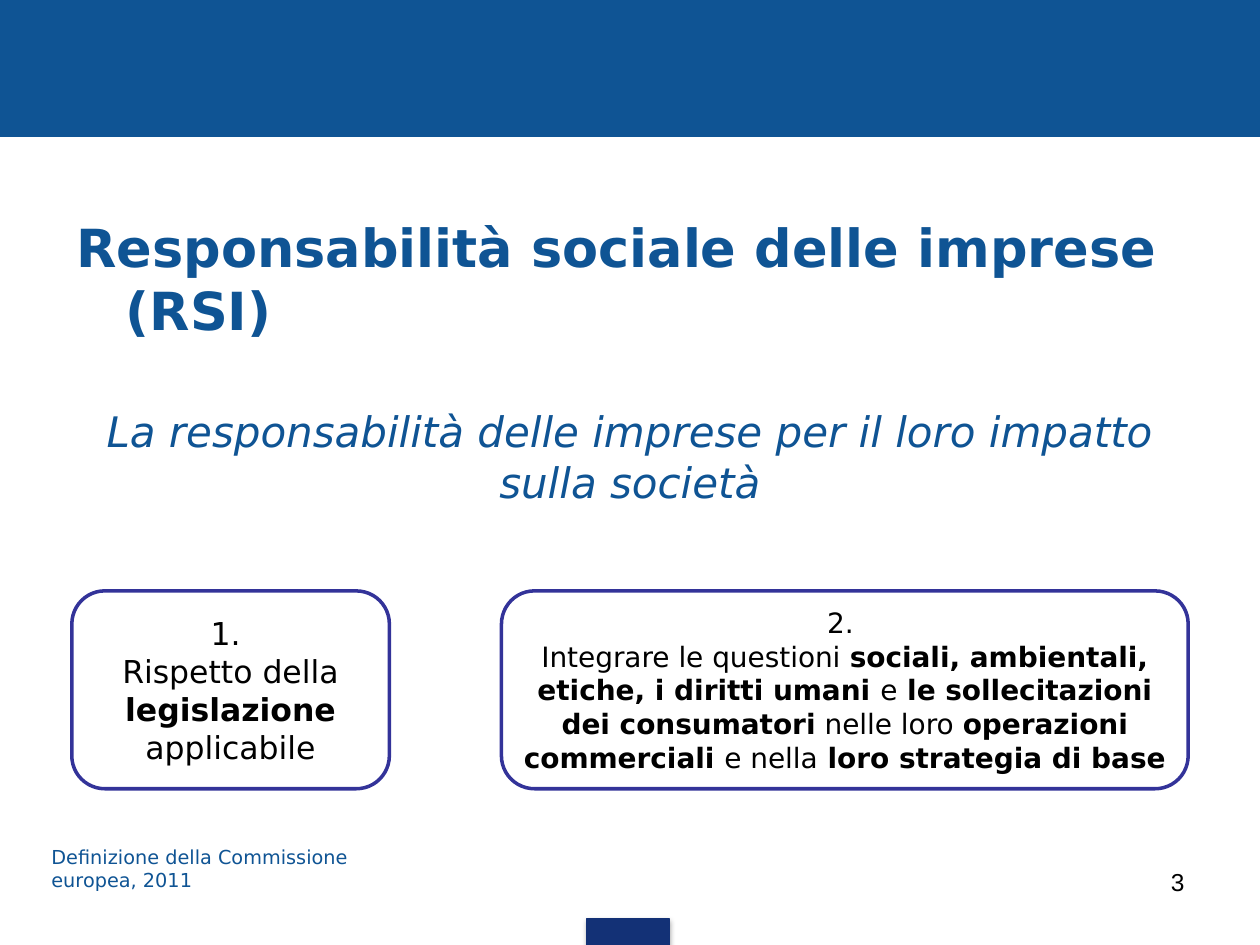
from dataclasses import dataclass

from lxml.etree import SubElement
from pptx import Presentation
from pptx.dml.color import RGBColor
from pptx.enum.shapes import MSO_SHAPE
from pptx.enum.text import MSO_ANCHOR, PP_ALIGN
from pptx.oxml.ns import qn
from pptx.shapes.autoshape import Shape
from pptx.slide import Slide
from pptx.util import Inches, Pt

BLUE = RGBColor(0x0F, 0x54, 0x94)
NAVY = RGBColor(0x13, 0x31, 0x76)
INDIGO = RGBColor(0x33, 0x33, 0x99)
WHITE = RGBColor(0xFF, 0xFF, 0xFF)
BLACK = RGBColor(0, 0, 0)
FONT = "DejaVu Sans"
TITLE_INDENT = Inches(0.39)


@dataclass
class Box:
    left: float
    top: float
    width: float
    height: float

    def lengths(self) -> list[int]:
        return [Inches(value) for value in (self.left, self.top, self.width, self.height)]


@dataclass
class Label:
    box: Box
    text: str
    size: int
    color: RGBColor = BLUE
    font: str = FONT
    bold: bool = False
    italic: bool = False
    alignment: PP_ALIGN = PP_ALIGN.LEFT
    anchor: MSO_ANCHOR = MSO_ANCHOR.TOP


@dataclass
class Principle:
    box: Box
    number: str
    size: int
    phrases: list[tuple[str, bool]]


def add_panel(slide: Slide, kind: MSO_SHAPE, box: Box, fill: RGBColor, line: RGBColor, weight: float) -> Shape:
    shape = slide.shapes.add_shape(kind, *box.lengths())
    shape.shadow.inherit = False
    shape.fill.solid()
    shape.fill.fore_color.rgb = fill
    shape.line.color.rgb = line
    shape.line.width = Pt(weight)
    return shape


def add_shadow(shape: Shape) -> None:
    effects = shape._element.spPr.find(qn("a:effectLst"))
    shadow = SubElement(effects, qn("a:outerShdw"), blurRad=str(Pt(3.1)), dist=str(Pt(1.8)),
                        dir="5400000", rotWithShape="0")
    color = SubElement(shadow, qn("a:srgbClr"), val="000000")
    SubElement(color, qn("a:alpha"), val="35000")


def add_label(slide: Slide, label: Label) -> Shape:
    shape = slide.shapes.add_textbox(*label.box.lengths())
    frame = shape.text_frame
    frame.word_wrap = True
    frame.vertical_anchor = label.anchor
    frame.text = label.text
    paragraph = frame.paragraphs[0]
    paragraph.alignment = label.alignment
    font = paragraph.runs[0].font
    font.name, font.size = label.font, Pt(label.size)
    font.bold, font.italic = label.bold, label.italic
    font.color.rgb = label.color
    return shape


def add_principle(slide: Slide, principle: Principle) -> None:
    shape = add_panel(slide, MSO_SHAPE.ROUNDED_RECTANGLE, principle.box, WHITE, INDIGO, 2)
    frame = shape.text_frame
    frame.word_wrap = True
    frame.margin_left = frame.margin_right = Inches(0.08)
    frame.vertical_anchor = MSO_ANCHOR.MIDDLE
    frame.text = principle.number
    body = frame.add_paragraph()
    for text, bold in principle.phrases:
        run = body.add_run()
        run.text = text
        run.font.bold = bold
    for paragraph in frame.paragraphs:
        paragraph.alignment = PP_ALIGN.CENTER
        for run in paragraph.runs:
            run.font.name = FONT
            run.font.size = Pt(principle.size)
            run.font.color.rgb = BLACK


TITLE = Label(Box(0.51, 1.7, 9, 1.02), "Responsabilità sociale delle imprese (RSI)", 30,
              bold=True, anchor=MSO_ANCHOR.MIDDLE)
LABELS = [
    Label(Box(0.5, 3.17, 9, 1.02), "La responsabilità delle imprese per il loro impatto sulla società", 24,
          italic=True, alignment=PP_ALIGN.CENTER),
    Label(Box(0.31, 6.66, 3.23, 0.46), "Definizione della Commissione europea, 2011", 11),
    Label(Box(7.17, 6.83, 2.33, 0.52), "3", 14, BLACK, "Arial", alignment=PP_ALIGN.RIGHT),
]
PRINCIPLES = [
    Principle(Box(0.57, 4.69, 2.52, 1.57), "1. ", 18, [
        ("Rispetto della ", False),
        ("legislazione", True),
        (" applicabile", False),
    ]),
    Principle(Box(3.98, 4.69, 5.45, 1.57), "2. ", 16, [
        ("Integrare le questioni ", False),
        ("sociali, ambientali, etiche, i diritti umani ", True),
        ("e", False),
        (" le sollecitazioni dei consumatori", True),
        (" nelle loro ", False),
        ("operazioni commerciali ", True),
        ("e nella", False),
        (" loro strategia di base", True),
    ]),
]


def main() -> None:
    presentation = Presentation()
    presentation.slide_width, presentation.slide_height = Inches(10), Inches(7.5)
    slide = presentation.slides.add_slide(presentation.slide_layouts[6])

    add_panel(slide, MSO_SHAPE.RECTANGLE, Box(0, 0, 10, 1.08), BLUE, BLUE, 0.75)
    tab = add_panel(slide, MSO_SHAPE.RECTANGLE, Box(4.66, 7.29, 0.65, 0.22), NAVY, NAVY, 0.75)
    add_shadow(tab)

    title = add_label(slide, TITLE)
    properties = title.text_frame.paragraphs[0]._p.get_or_add_pPr()
    properties.set("marL", str(TITLE_INDENT))
    properties.set("indent", str(-TITLE_INDENT))

    for principle in PRINCIPLES:
        add_principle(slide, principle)
    for label in LABELS:
        add_label(slide, label)

    presentation.save("out.pptx")


if __name__ == "__main__":
    main()
